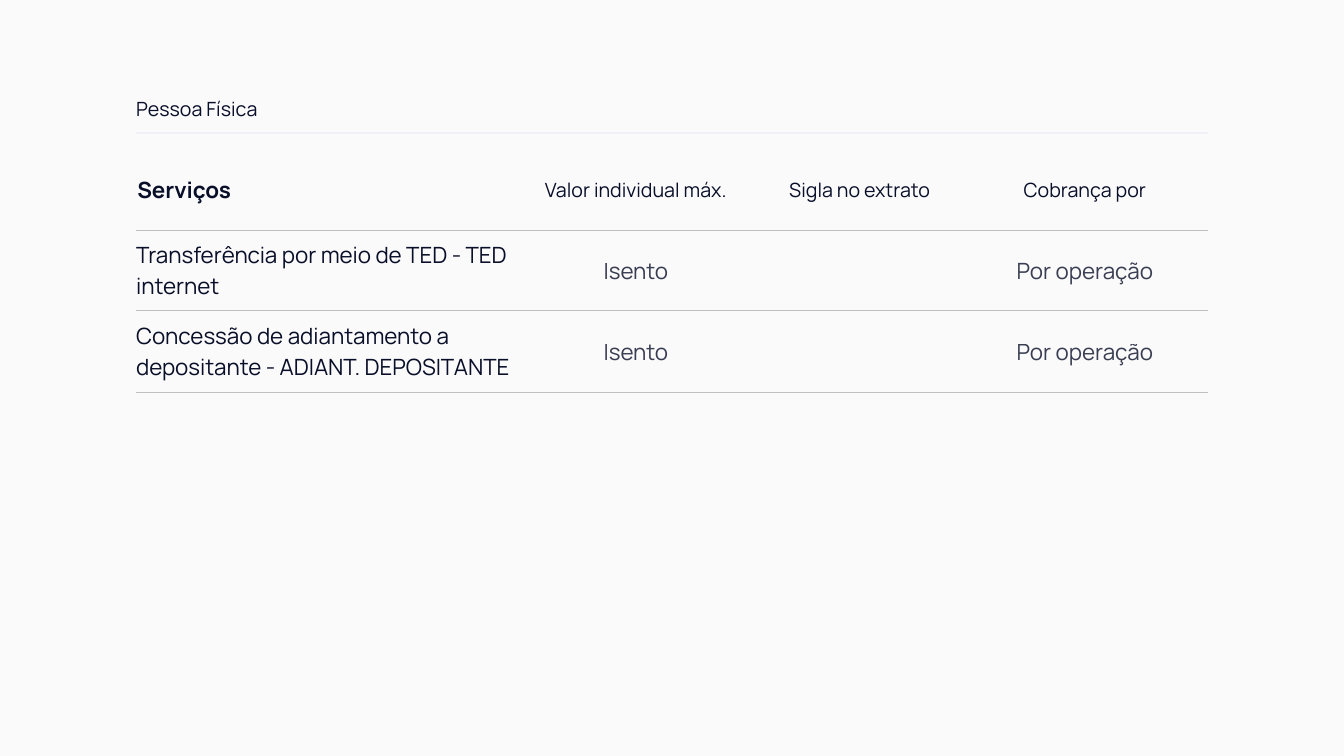
from dataclasses import dataclass

from lxml.etree import SubElement
from pptx import Presentation
from pptx.dml.color import RGBColor
from pptx.enum.shapes import MSO_CONNECTOR
from pptx.enum.text import MSO_ANCHOR, MSO_AUTO_SIZE, PP_ALIGN
from pptx.oxml import parse_xml
from pptx.oxml.ns import nsdecls, qn
from pptx.util import Cm, Pt


@dataclass(frozen=True)
class Theme:
    font: str = "Manrope"
    background: RGBColor = RGBColor.from_string("FAFAFA")
    ink: RGBColor = RGBColor.from_string("090E29")
    rule: RGBColor = RGBColor.from_string("1226AA")
    border: str = "BFBFBF"
    label_size: Pt = Pt(14)
    body_size: Pt = Pt(16)
    rule_opacity: int = 30
    value_opacity: int = 80


THEME = Theme()
NO_GRID_STYLE = "{2D5ABB26-0587-4C30-8999-92F81FD0307C}"

COLUMN_WIDTHS = (9.52, 6.15, 5.13, 6.22)
ROW_HEIGHTS = (2.08, 2.01, 2.08)
FEES = (
    ("Serviços", "Valor individual máx.", "Sigla no extrato", "Cobrança por"),
    ("Transferência por meio de TED - TED internet", "Isento", "", "Por operação"),
    ("Concessão de adiantamento a depositante - ADIANT. DEPOSITANTE",
     "Isento", "", "Por operação"),
)


def set_opacity(fill, percent):
    color = fill._xPr.find(qn("a:solidFill"))[0]
    SubElement(color, qn("a:alpha"), val=str(percent * 1000))


def format_paragraph(paragraph, size, bold=False):
    font = paragraph.font
    font.name, font.size, font.bold = THEME.font, size, bold
    font.color.rgb = THEME.ink


def add_heading(slide, left, top, width):
    """Section title above a thin rule."""
    title = slide.shapes.title
    title.left, title.top, title.width, title.height = Cm(left), Cm(top), Cm(14.9), Cm(0.61)
    frame = title.text_frame
    frame.margin_left = frame.margin_right = frame.margin_top = frame.margin_bottom = 0
    frame.vertical_anchor = MSO_ANCHOR.TOP
    frame.auto_size = MSO_AUTO_SIZE.NONE
    frame.text = "Pessoa Física"
    frame.paragraphs[0].alignment = PP_ALIGN.LEFT
    format_paragraph(frame.paragraphs[0], THEME.label_size)

    rule_top = Cm(top + 0.91)
    rule = slide.shapes.add_connector(
        MSO_CONNECTOR.STRAIGHT, Cm(left), rule_top, Cm(left + width), rule_top)
    rule.line.width = Pt(0.25)
    rule.line.color.rgb = THEME.rule
    set_opacity(rule.line.fill, THEME.rule_opacity)
    SubElement(rule._element.spPr, qn("a:effectLst"))


def add_bottom_border(cell):
    cell._tc.get_or_add_tcPr().insert(0, parse_xml(
        f'<a:lnB {nsdecls("a")} w="{Pt(1)}"><a:solidFill>'
        f'<a:srgbClr val="{THEME.border}"/></a:solidFill></a:lnB>'))


def fill_cell(cell, text, is_header, is_service):
    margin = Cm(0) if is_service and not is_header else Cm(0.03)
    cell.margin_left = cell.margin_right = cell.margin_top = margin
    cell.margin_bottom = 0
    cell.vertical_anchor = MSO_ANCHOR.MIDDLE
    cell.fill.background()
    add_bottom_border(cell)
    if not text:
        return
    cell.text = text
    paragraph = cell.text_frame.paragraphs[0]
    paragraph.alignment = PP_ALIGN.LEFT if is_service else PP_ALIGN.CENTER
    size = THEME.label_size if is_header and not is_service else THEME.body_size
    format_paragraph(paragraph, size, bold=is_header and is_service)
    if not is_header and not is_service:
        set_opacity(paragraph.font.fill, THEME.value_opacity)


def add_fee_table(slide, left, top, width):
    """Fees by service, separated by horizontal lines."""
    frame = slide.shapes.add_table(
        len(FEES), len(COLUMN_WIDTHS), Cm(left), Cm(top), Cm(width), Cm(sum(ROW_HEIGHTS)))
    table = frame.table
    table.first_row = table.horz_banding = False
    table._tbl.tblPr.find(qn("a:tableStyleId")).text = NO_GRID_STYLE
    for column, column_width in zip(table.columns, COLUMN_WIDTHS):
        column.width = Cm(column_width)
    for row, row_height, texts in zip(table.rows, ROW_HEIGHTS, FEES):
        row.height = Cm(row_height)
        for index, (cell, text) in enumerate(zip(row.cells, texts)):
            fill_cell(cell, text, is_header=texts is FEES[0], is_service=index == 0)


def add_fee_slide(presentation):
    slide = presentation.slides.add_slide(presentation.slide_layouts[5])
    slide.background.fill.solid()
    slide.background.fill.fore_color.rgb = THEME.background
    left, width = 3.43, sum(COLUMN_WIDTHS)
    add_heading(slide, left, 2.44, width)
    add_fee_table(slide, left, 3.73, width)


def main():
    presentation = Presentation()
    presentation.slide_width, presentation.slide_height = Cm(33.87), Cm(19.05)
    add_fee_slide(presentation)
    presentation.save("out.pptx")


if __name__ == "__main__":
    main()
